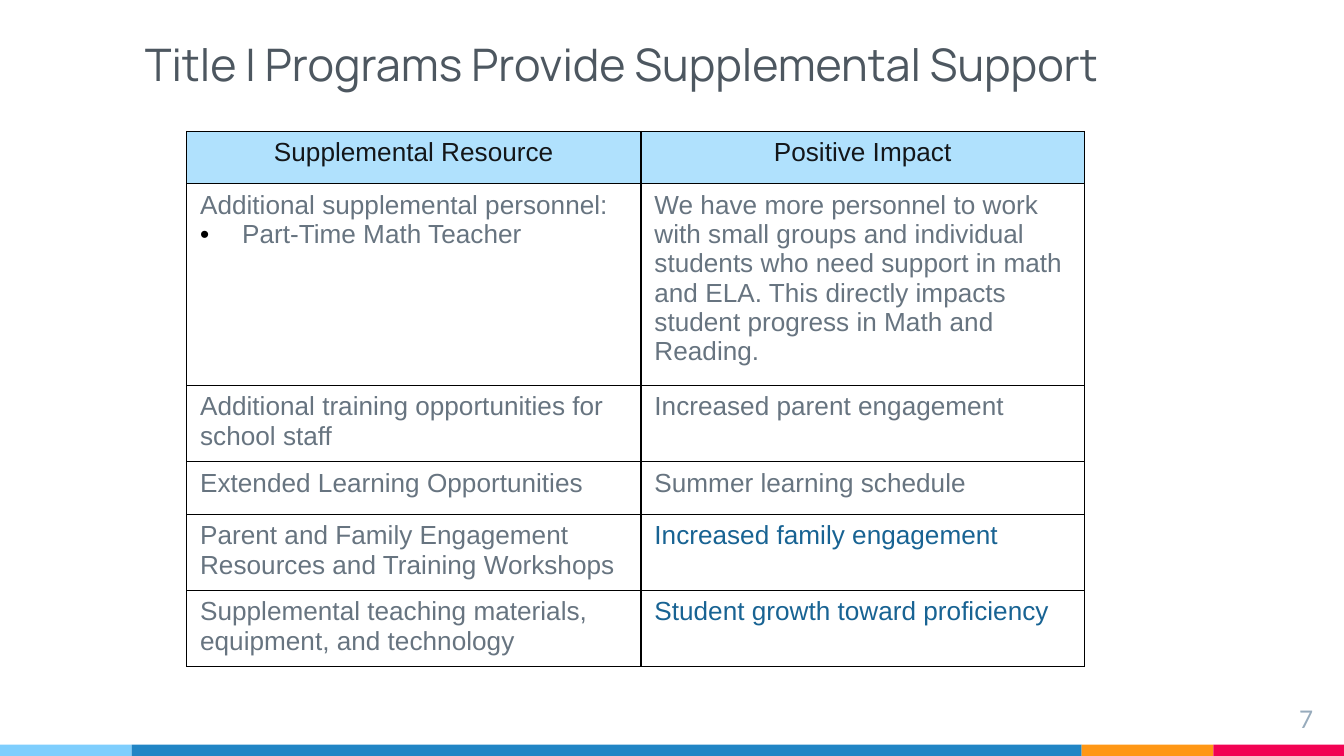
import pptx
import pptx.dml.color
import pptx.enum.shapes
import pptx.enum.text
import pptx.oxml.ns
import pptx.util
from lxml import etree

Pt = pptx.util.Pt
ALIGN = pptx.enum.text.PP_ALIGN
ANCHOR = pptx.enum.text.MSO_ANCHOR

GRAY, BLUE, BLACK = "677480", "186393", "000000"
BULLET = "• "
HEADERS = ["Supplemental Resource", "Positive Impact"]
# Row height, resource paragraphs, impact, impact colour
ROWS = [
    (102, ["Additional supplemental personnel:", BULLET + "Part-Time Math Teacher"],
     "We have more personnel to work with small groups and individual students who need "
     "support in math and ELA. This directly impacts student progress in Math and Reading.", GRAY),
    (38.6, ["Additional training opportunities for school staff"],
     "Increased parent engagement", GRAY),
    (28.2, ["Extended Learning Opportunities"], "Summer learning schedule", GRAY),
    (38.6, ["Parent and Family Engagement Resources and Training Workshops"],
     "Increased family engagement", BLUE),
    (38.6, ["Supplemental teaching materials, equipment, and technology"],
     "Student growth toward proficiency", BLUE),
]
HEADER_HEIGHT = 28
COLUMN_WIDTHS = [243.4, 237.6]
# Width and colour of each footer segment, left to right
FOOTER = [(70.5, "7ECEFD"), (509, "2185C5"), (70.5, "FF9715"), (70, "F20253")]


def rgb(color):
    return pptx.dml.color.RGBColor.from_string(color)


def add_child(parent, tag, **attributes):
    return etree.SubElement(parent, pptx.oxml.ns.qn(tag), **attributes)


def add_bullet(paragraph, indent=22.5):
    properties = paragraph._p.get_or_add_pPr()
    properties.set("marL", str(Pt(indent)))
    properties.set("indent", str(-Pt(indent)))
    add_child(add_child(properties, "a:buClr"), "a:srgbClr", val=BLACK)
    add_child(properties, "a:buFont", typeface="Arial")
    add_child(properties, "a:buChar", char=BULLET.strip())


def write_text(paragraph, text, size=14, font="Arial", color=GRAY, align=ALIGN.LEFT):
    paragraph.alignment = align
    if text.startswith(BULLET):
        add_bullet(paragraph)
        text = text.removeprefix(BULLET)
    run = paragraph.add_run()
    run.text = text
    run.font.size = Pt(size)
    run.font.name = font
    run.font.color.rgb = rgb(color)


def add_text_box(slide, left, top, width, height, text, anchor=ANCHOR.TOP, **text_format):
    box = slide.shapes.add_textbox(Pt(left), Pt(top), Pt(width), Pt(height))
    frame = box.text_frame
    frame.word_wrap = True
    frame.vertical_anchor = anchor
    frame.margin_left = frame.margin_right = Pt(7.2)
    frame.margin_top = frame.margin_bottom = Pt(7.2)
    write_text(frame.paragraphs[0], text, **text_format)


def add_footer(slide, top=399, height=6):
    left = 0
    for width, color in FOOTER:
        shape = slide.shapes.add_shape(pptx.enum.shapes.MSO_SHAPE.RECTANGLE,
                                       Pt(left), Pt(top), Pt(width), Pt(height))
        shape.shadow.inherit = False
        shape.fill.solid()
        shape.fill.fore_color.rgb = rgb(color)
        shape.line.fill.background()
        left += width


def set_borders(cell, width=0.75):
    properties = cell._tc.get_or_add_tcPr()
    for side in ("L", "R", "T", "B"):
        line = add_child(properties, f"a:ln{side}", w=str(Pt(width)))
        add_child(add_child(line, "a:solidFill"), "a:srgbClr", val=BLACK)


def fill_cell(cell, texts, fill=None, **text_format):
    set_borders(cell)
    if fill:
        cell.fill.solid()
        cell.fill.fore_color.rgb = rgb(fill)
    else:
        cell.fill.background()
    frame = cell.text_frame
    for index, text in enumerate(texts):
        paragraph = frame.add_paragraph() if index else frame.paragraphs[0]
        write_text(paragraph, text, **text_format)


def add_support_table(slide, left=100, top=70.4):
    heights = [HEADER_HEIGHT] + [row[0] for row in ROWS]
    frame = slide.shapes.add_table(len(heights), len(COLUMN_WIDTHS), Pt(left), Pt(top),
                                   Pt(sum(COLUMN_WIDTHS)), Pt(sum(heights)))
    table = frame.table
    table.first_row = table.horz_banding = False
    for column, width in zip(table.columns, COLUMN_WIDTHS):
        column.width = Pt(width)
    for row, height in zip(table.rows, heights):
        row.height = Pt(height)
    for index, header in enumerate(HEADERS):
        fill_cell(table.cell(0, index), [header], fill="B0E1FD",
                  color="131619", align=ALIGN.CENTER)
    for index, (_, resources, impact, color) in enumerate(ROWS, start=1):
        fill_cell(table.cell(index, 0), resources)
        fill_cell(table.cell(index, 1), [impact], color=color)


def main():
    presentation = pptx.Presentation()
    presentation.slide_width, presentation.slide_height = Pt(720), Pt(405)
    slide = presentation.slides.add_slide(presentation.slide_layouts[6])
    add_footer(slide)
    add_text_box(slide, 70.5, 15, 552, 40.5, "Title I Programs Provide Supplemental Support",
                 anchor=ANCHOR.BOTTOM, size=24, font="Manrope", color="4D5760")
    add_text_box(slide, 667.5, 370, 43, 24.5, "7",
                 size=13, font="Lato", color="97ABBC", align=ALIGN.RIGHT)
    add_support_table(slide)
    presentation.save("out.pptx")


if __name__ == "__main__":
    main()
